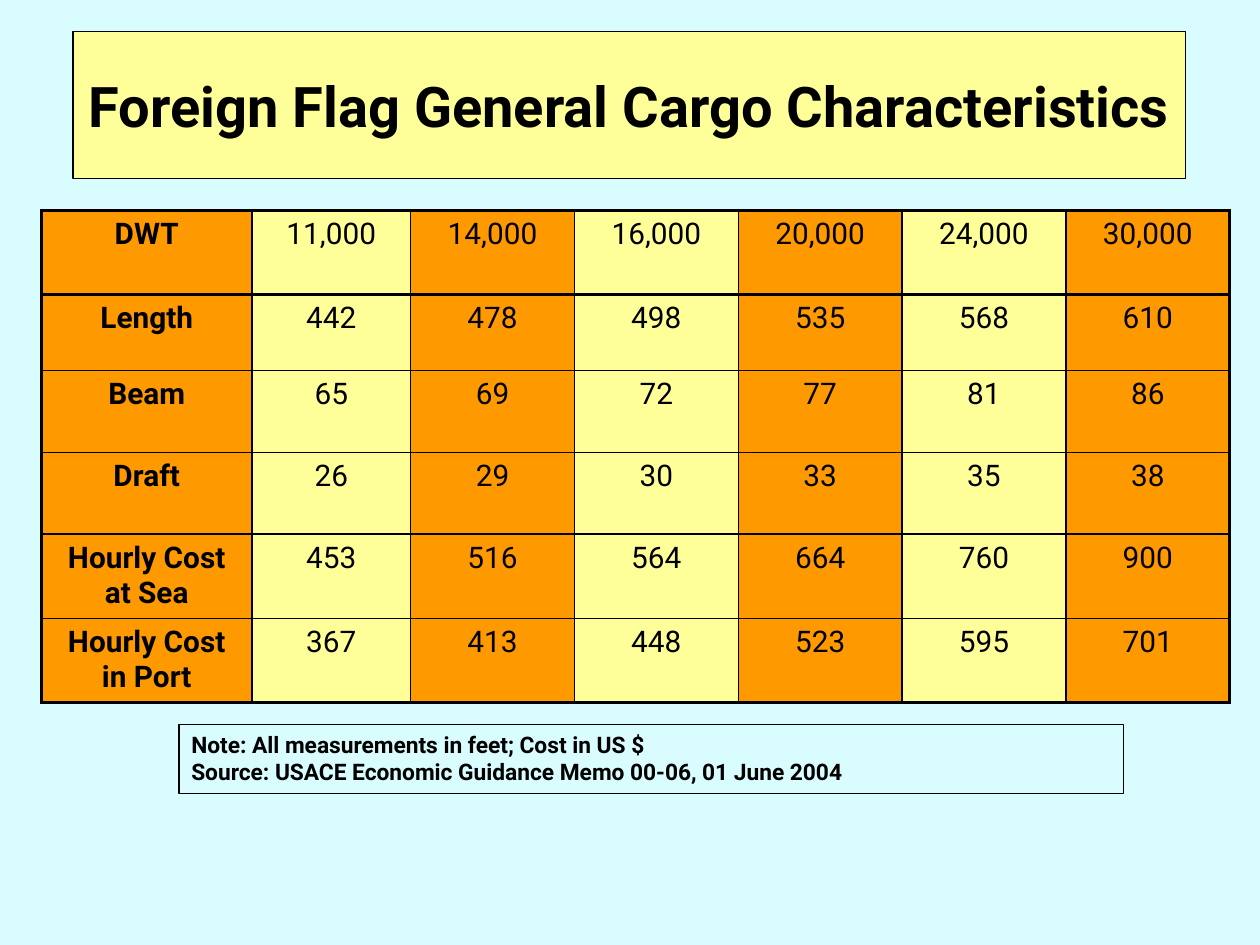
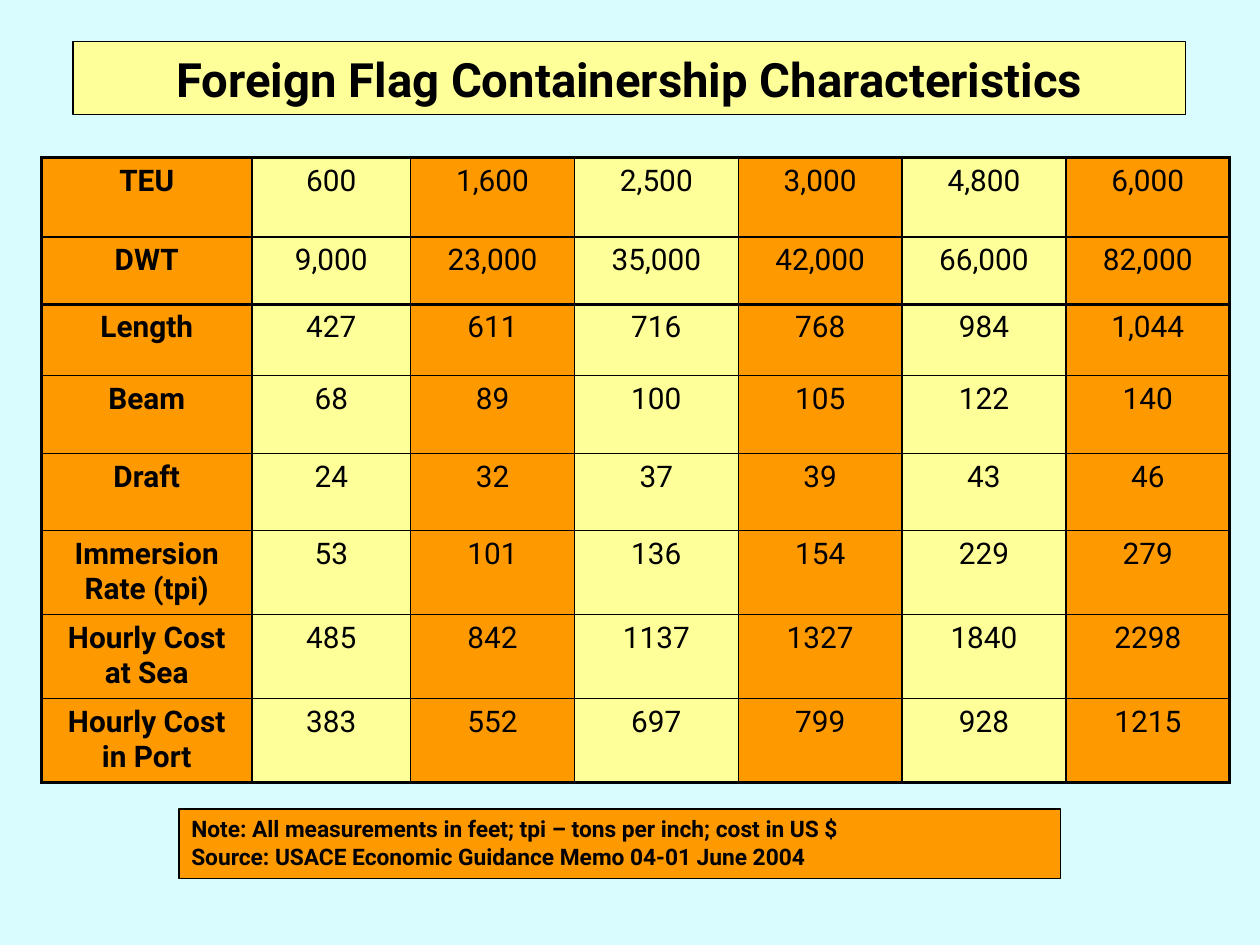
"""Build two slides of foreign flag ship characteristics."""
import pptx
import pptx.dml.color
import pptx.enum.shapes
import pptx.enum.text
import pptx.oxml
import pptx.oxml.ns
import pptx.util
from lxml import etree

Inches = pptx.util.Inches
Pt = pptx.util.Pt

BACKGROUND = "D9FDFF"
YELLOW = "FFFF99"
ORANGE = "FF9900"
BLACK = "000000"
FONT = "Roboto"
TABLE_LEFT = 0.33
TABLE_RIGHT = 9.75
COLUMN_WIDTHS = [1.67, 1.26] + [1.3] * 5
INNER_BORDER = 1
OUTER_BORDER = 2.25

CARGO_ROWS = [
    ("DWT", "11,000", "14,000", "16,000", "20,000", "24,000", "30,000"),
    ("Length", "442", "478", "498", "535", "568", "610"),
    ("Beam", "65", "69", "72", "77", "81", "86"),
    ("Draft", "26", "29", "30", "33", "35", "38"),
    ("Hourly Cost at Sea", "453", "516", "564", "664", "760", "900"),
    ("Hourly Cost in Port", "367", "413", "448", "523", "595", "701"),
]
CONTAINERSHIP_ROWS = [
    ("TEU", "600", "1,600", "2,500", "3,000", "4,800", "6,000"),
    ("DWT", "9,000", "23,000", "35,000", "42,000", "66,000", "82,000"),
    ("Length", "427", "611", "716", "768", "984", "1,044"),
    ("Beam", "68", "89", "100", "105", "122", "140"),
    ("Draft", "24", "32", "37", "39", "43", "46"),
    ("Immersion Rate (tpi)", "53", "101", "136", "154", "229", "279"),
    ("Hourly Cost at Sea", "485", "842", "1137", "1327", "1840", "2298"),
    ("Hourly Cost in Port", "383", "552", "697", "799", "928", "1215"),
]


def colour(hex_code):
    """Return the RGB colour for a hex string."""
    return pptx.dml.color.RGBColor.from_string(hex_code)


def paint(fill, hex_code):
    """Give a fill one solid colour."""
    fill.solid()
    fill.fore_color.rgb = colour(hex_code)


def style_paragraph(paragraph, size, bold, alignment):
    """Set the font and alignment of a paragraph."""
    paragraph.alignment = alignment
    paragraph.font.name = FONT
    paragraph.font.size = Pt(size)
    paragraph.font.bold = bold
    paragraph.font.color.rgb = colour(BLACK)


def add_slide(presentation):
    """Add a blank slide with the shared background."""
    slide = presentation.slides.add_slide(presentation.slide_layouts[6])
    paint(slide.background.fill, BACKGROUND)
    return slide


def add_box(slide, text, left, top, width, height, size, alignment, fill=None):
    """Add an outlined box of bold text and return its text frame."""
    shape = slide.shapes.add_textbox(
        Inches(left), Inches(top), Inches(width), Inches(height))
    if fill:
        paint(shape.fill, fill)
    shape.line.color.rgb = colour(BLACK)
    shape.line.width = Pt(0.75)
    frame = shape.text_frame
    frame.word_wrap = True
    frame.text = text
    style_paragraph(frame.paragraphs[0], size, True, alignment)
    return frame


def add_title(slide, text, top, height, size):
    """Add the yellow title box."""
    frame = add_box(slide, text, 0.58, top, 8.83, height, size,
                    pptx.enum.text.PP_ALIGN.CENTER, YELLOW)
    frame.vertical_anchor = pptx.enum.text.MSO_ANCHOR.MIDDLE


def add_note(slide, lines, top, width, fill=None):
    """Add the box with the note and its source."""
    frame = add_box(slide, "\v".join(lines), 1.42, top, width, 0.55, 13,
                    pptx.enum.text.PP_ALIGN.LEFT, fill)
    frame.auto_size = pptx.enum.text.MSO_AUTO_SIZE.SHAPE_TO_FIT_TEXT


def set_borders(cell, outer_sides):
    """Draw black cell borders, heavier on the outer sides."""
    properties = cell._tc.get_or_add_tcPr()
    for side in "LRTB":
        width = OUTER_BORDER if side in outer_sides else INNER_BORDER
        line = etree.SubElement(
            properties, pptx.oxml.ns.qn(f"a:ln{side}"), w=str(Pt(width)))
        solid = etree.SubElement(line, pptx.oxml.ns.qn("a:solidFill"))
        etree.SubElement(solid, pptx.oxml.ns.qn("a:srgbClr"), val=BLACK)


def add_ship_table(slide, rows, top, row_heights):
    """Add the ship table with alternating column colours."""
    table = slide.shapes.add_table(
        len(rows), len(COLUMN_WIDTHS), Inches(TABLE_LEFT), Inches(top),
        Inches(sum(COLUMN_WIDTHS)), Inches(sum(row_heights))).table
    table.first_row = False
    table.horz_banding = False
    for column, width in zip(table.columns, COLUMN_WIDTHS):
        column.width = Inches(width)
    for row, height in zip(table.rows, row_heights):
        row.height = Inches(height)
    last_row, last_column = len(rows) - 1, len(COLUMN_WIDTHS) - 1
    for row_index, values in enumerate(rows):
        for column_index, value in enumerate(values):
            cell = table.cell(row_index, column_index)
            cell.text = value
            style_paragraph(cell.text_frame.paragraphs[0], 17,
                            column_index == 0, pptx.enum.text.PP_ALIGN.CENTER)
            edges = {"L": column_index == 0, "R": column_index == last_column,
                     "T": row_index == 0, "B": row_index == last_row}
            set_borders(cell, [side for side in edges if edges[side]])
            paint(cell.fill, YELLOW if column_index % 2 else ORANGE)


def add_rule(slide, top):
    """Add a thin line across the table."""
    connector = slide.shapes.add_connector(
        pptx.enum.shapes.MSO_CONNECTOR.STRAIGHT,
        Inches(TABLE_LEFT), Inches(top), Inches(TABLE_RIGHT), Inches(top))
    connector.line.color.rgb = colour(BLACK)
    connector.line.width = Pt(0.75)
    etree.SubElement(connector._element.spPr, pptx.oxml.ns.qn("a:effectLst"))


def main():
    """Build both slides and save the presentation."""
    presentation = pptx.Presentation()
    presentation.slide_width = Inches(10)
    presentation.slide_height = Inches(7.5)

    slide = add_slide(presentation)
    add_title(slide, "Foreign Flag General Cargo Characteristics", 0.25, 1.17, 32)
    add_ship_table(slide, CARGO_ROWS, 1.67, [0.67, 0.6] + [0.65] * 4)
    add_note(slide, ["Note: All measurements in feet; Cost in US $",
                     "Source: USACE Economic Guidance Memo 00-06, 01 June 2004"],
             5.75, 7.5)
    add_rule(slide, 2.33)

    slide = add_slide(presentation)
    add_title(slide, "Foreign Flag Containership Characteristics", 0.33, 0.58, 27)
    add_ship_table(slide, CONTAINERSHIP_ROWS, 1.25,
                   [0.63, 0.53, 0.57, 0.62, 0.61, 0.66, 0.66, 0.66])
    add_note(slide, ["Note: All measurements in feet; tpi – tons per inch; cost in US $",
                     "Source: USACE Economic Guidance Memo 04-01 June 2004"],
             6.42, 7, ORANGE)
    add_rule(slide, 2.42)

    presentation.save("out.pptx")


if __name__ == "__main__":
    main()
